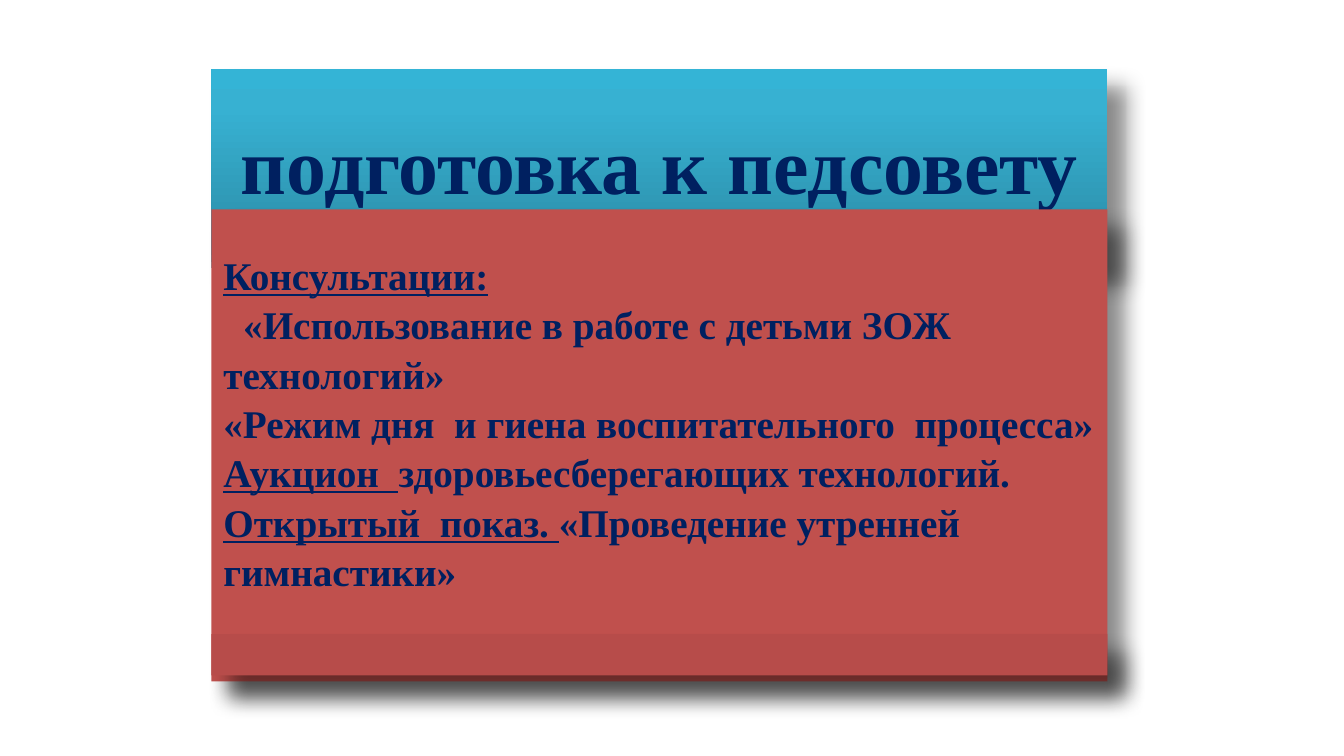
from copy import deepcopy
from dataclasses import dataclass

from lxml import etree
from pptx import Presentation
from pptx.dml.color import RGBColor
from pptx.enum.shapes import MSO_SHAPE
from pptx.enum.text import MSO_ANCHOR, PP_ALIGN
from pptx.oxml.ns import qn
from pptx.util import Cm, Pt

RECTANGLE = MSO_SHAPE.RECTANGLE
MIDDLE = MSO_ANCHOR.MIDDLE
CENTER, LEFT = PP_ALIGN.CENTER, PP_ALIGN.LEFT


@dataclass(frozen=True)
class Theme:
    font: str = "Times New Roman"
    ink: str = "002060"
    panel: str = "C0504D"
    footer: str = "B74C4A"
    header: tuple = ((0, "2A88A2"), (0.8, "37B1D2"), (1, "34B4D6"))
    shadow: str = "000000"
    title_size: int = 57
    body_size: int = 28


theme = Theme()


def add_block(top, height, color):
    block = page.shapes.add_shape(RECTANGLE, Cm(5.33), Cm(top), Cm(22.58), Cm(height))
    block.shadow.inherit = False
    block.fill.solid()
    block.fill.fore_color.rgb = RGBColor.from_string(color)
    block.line.fill.background()
    effects = block._element.spPr.find(qn("a:effectLst"))
    shadow = etree.SubElement(effects, qn("a:outerShdw"), blurRad=str(Pt(15)),
                              dist=str(Pt(18)), dir="2700000", rotWithShape="0")
    tint = etree.SubElement(shadow, qn("a:srgbClr"), val=theme.shadow)
    etree.SubElement(tint, qn("a:alpha"), val="45000")
    frame = block.text_frame
    frame.word_wrap = True
    frame.vertical_anchor = MIDDLE
    return block


def style_paragraph(para, size, alignment, spacing):
    para.alignment = alignment
    para.line_spacing = spacing
    para.font.name = theme.font
    para.font.size = Pt(size)
    para.font.bold = True
    para.font.color.rgb = RGBColor.from_string(theme.ink)


deck = Presentation()
deck.slide_width, deck.slide_height = Cm(33.87), Cm(19.05)
page = deck.slides.add_slide(deck.slide_layouts[6])

header = add_block(1.73, 5.03, theme.header[0][1])
header.fill.gradient()
header.fill.gradient_angle = 90
stop_list = header._element.spPr.find(qn("a:gradFill")).find(qn("a:gsLst"))
stop_list.append(deepcopy(stop_list[-1]))
for stop, (position, color) in zip(header.fill.gradient_stops, theme.header):
    stop.position = position
    stop.color.rgb = RGBColor.from_string(color)

title = header.text_frame
title.margin_left = title.margin_right = Cm(0.6)
title.margin_top = title.margin_bottom = Cm(0.6)
title.text = "подготовка к педсовету"
style_paragraph(title.paragraphs[0], theme.title_size, CENTER, 0.9)

panel = add_block(5.28, 11.89, theme.panel)
body = panel.text_frame
body.margin_left = body.margin_right = body.margin_top = Cm(0.3)
body.margin_bottom = Cm(1.5)

entries = [
    ("Консультации:", "", 0),
    ("", "«Использование в работе с детьми ЗОЖ технологий»", 0.5),
    ("", "«Режим дня  и гиена воспитательного  процесса»", 0),
    ("Аукцион  ", "здоровьесберегающих технологий.", 0),
    ("Открытый  показ. ", "«Проведение утренней  гимнастики»", 0),
]
for number, (heading, detail, indent) in enumerate(entries):
    para = body.add_paragraph() if number else body.paragraphs[0]
    style_paragraph(para, theme.body_size, LEFT, 1.05)
    if indent:
        para._p.get_or_add_pPr().set("indent", str(Cm(indent)))
    for text, underlined in ((heading, True), (detail, False)):
        if text:
            span = para.add_run()
            span.text = text
            span.font.underline = underlined

add_block(15.98, 1.04, theme.footer)

deck.save("out.pptx")
